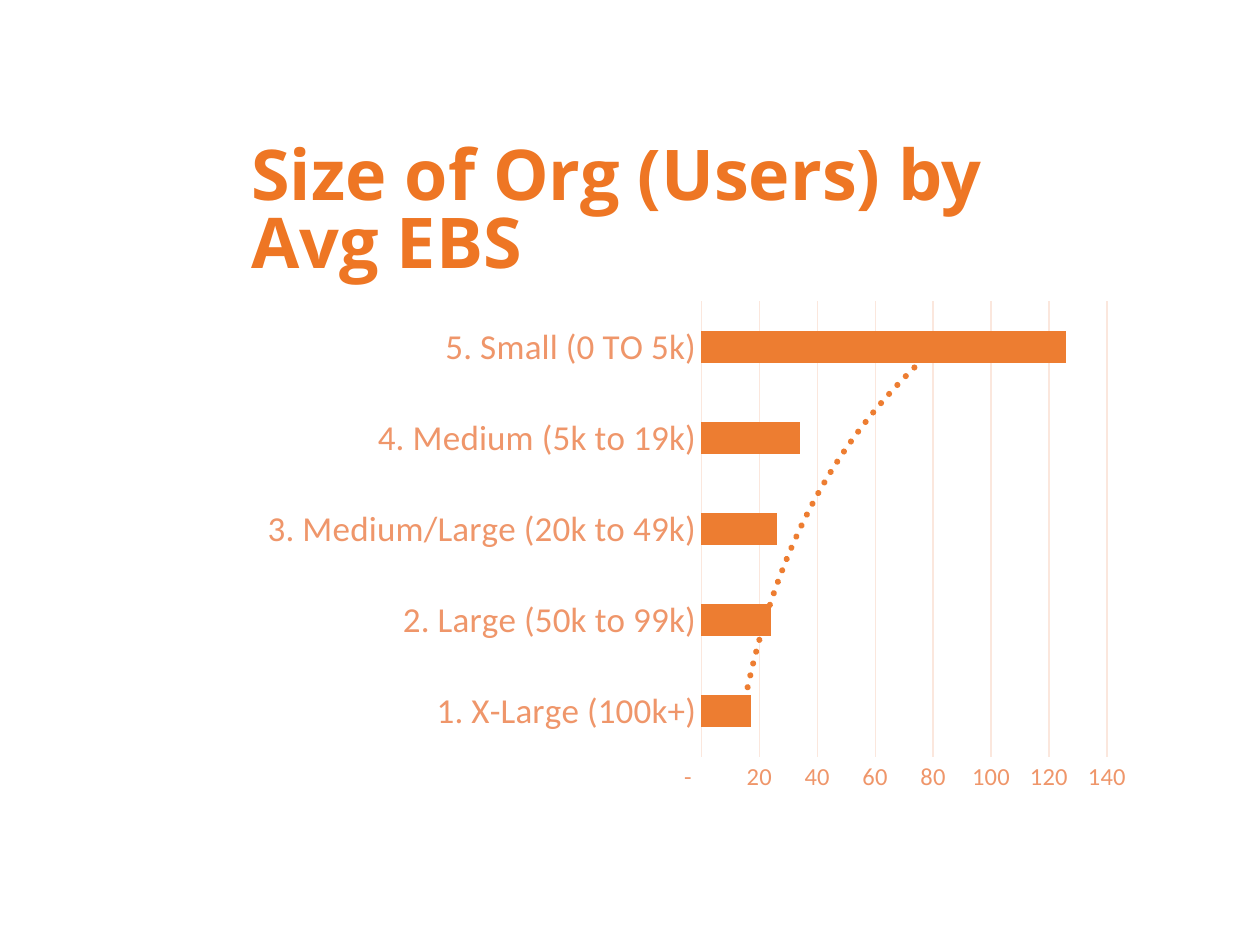
from lxml.etree import SubElement
from pptx import Presentation
from pptx.chart.data import CategoryChartData
from pptx.dml.color import RGBColor
from pptx.enum.chart import XL_CHART_TYPE as ChartType, XL_TICK_MARK as TickMark
from pptx.enum.text import MSO_ANCHOR as Anchor
from pptx.oxml import parse_xml
from pptx.oxml.ns import nsdecls, qn
from pptx.util import Emu, Pt

PX = 914400 // 126
TITLE_COLOR = RGBColor(0xEE, 0x76, 0x24)
BAR_COLOR = RGBColor(0xED, 0x7D, 0x31)
CHART_TEXT = RGBColor(0xE7, 0x5E, 0x1A)
AXIS_TEXT = RGBColor(0xEF, 0x96, 0x6A)
GRID_COLOR = RGBColor(0xFB, 0xE7, 0xDD)
NUMBER_FORMAT = r'_(* #,##0_);_(* \(#,##0\);_(* "-"??_);_(@_)'

AVERAGE_EBS = {
    "1. X-Large (100k+)": 17,
    "2. Large (50k to 99k)": 24,
    "3. Medium/Large (20k to 49k)": 26,
    "4. Medium (5k to 19k)": 34,
    "5. Small (0 TO 5k)": 126,
}
PLOT_AREA = {"x": 0.5, "y": 0.02, "w": 0.45, "h": 0.89}


def px(*lengths):
    return [Emu(length * PX) for length in lengths]


def apply_format(target, **values):
    for name, value in values.items():
        setattr(target, name, value)


def format_font(font, name, size, color, bold=False):
    apply_format(font, name=name, size=Pt(size), bold=bold)
    font.color.rgb = color


def format_line(line, color, width):
    line.color.rgb = color
    line.width = Pt(width)


def add_title(slide, text):
    frame = slide.shapes.add_textbox(*px(239, 141, 888, 67)).text_frame
    apply_format(frame, word_wrap=True, vertical_anchor=Anchor.TOP)
    paragraph = frame.paragraphs[0]
    apply_format(paragraph, text=text, line_spacing=0.8)
    format_font(paragraph.runs[0].font, "Open Sans", 40, TITLE_COLOR, True)


def format_axis(axis, size):
    apply_format(axis, major_tick_mark=TickMark.NONE, minor_tick_mark=TickMark.NONE)
    format_font(axis.tick_labels.font, "Calibri", size, AXIS_TEXT)


def set_plot_area(chart):
    plot_area = chart.plots[0]._element.getparent()
    for old_layout in plot_area.findall(qn("c:layout")):
        plot_area.remove(old_layout)
    layout = parse_xml(f"<c:layout {nsdecls('c')}><c:manualLayout/></c:layout>")
    settings = {"layoutTarget": "inner", "xMode": "edge", "yMode": "edge", **PLOT_AREA}
    for name, value in settings.items():
        SubElement(layout[0], qn(f"c:{name}")).set("val", str(value))
    plot_area.insert(0, layout)


def add_trendline(series):
    trendline = parse_xml(
        f"<c:trendline {nsdecls('c', 'a')}>"
        f'<c:spPr><a:ln w="{Pt(3.5)}" cap="rnd"><a:solidFill>'
        f'<a:srgbClr val="{BAR_COLOR}"/></a:solidFill>'
        '<a:prstDash val="sysDot"/></a:ln></c:spPr>'
        '<c:trendlineType val="exp"/><c:dispRSqr val="0"/><c:dispEq val="0"/>'
        "</c:trendline>"
    )
    series._element.find(qn("c:cat")).addprevious(trendline)


def add_bar_chart(slide, values):
    data = CategoryChartData(number_format=NUMBER_FORMAT)
    data.categories = list(values)
    data.add_series("Series 1", list(values.values()))
    chart = slide.shapes.add_chart(
        ChartType.BAR_CLUSTERED, *px(251, 291, 901, 512), data
    ).chart
    apply_format(chart, has_legend=False, has_title=False)
    format_font(chart.font, "Calibri", 10, CHART_TEXT)
    set_plot_area(chart)

    category_axis, value_axis = chart.category_axis, chart.value_axis
    format_axis(category_axis, 20)
    format_line(category_axis.format.line, GRID_COLOR, 0.75)
    format_axis(value_axis, 14)
    value_axis.format.line.fill.background()
    apply_format(value_axis, minimum_scale=0, maximum_scale=140, major_unit=20)
    apply_format(
        value_axis.tick_labels,
        number_format=NUMBER_FORMAT,
        number_format_is_linked=False,
    )
    format_line(value_axis.major_gridlines.format.line, GRID_COLOR, 0.75)

    plot = chart.plots[0]
    apply_format(plot, gap_width=182, vary_by_categories=False)
    series = plot.series[0]
    series.format.fill.solid()
    series.format.fill.fore_color.rgb = BAR_COLOR
    add_trendline(series)


def main():
    presentation = Presentation()
    width, height = px(1260, 945)
    apply_format(presentation, slide_width=width, slide_height=height)
    slide = presentation.slides.add_slide(presentation.slide_layouts[6])
    add_bar_chart(slide, AVERAGE_EBS)
    add_title(slide, "Size of Org (Users) by Avg EBS")
    presentation.save("out.pptx")


if __name__ == "__main__":
    main()
